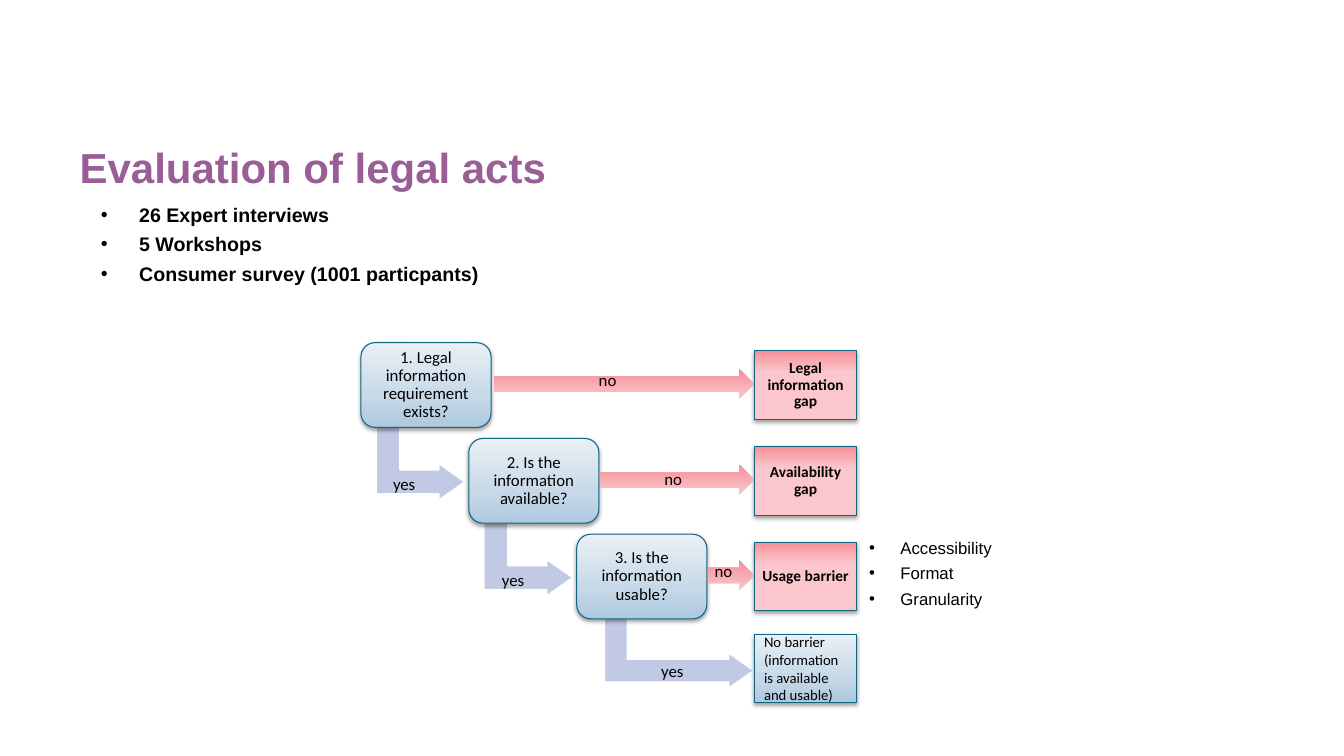
import lxml.etree
import pptx
import pptx.dml.color
import pptx.enum.shapes
import pptx.enum.text
import pptx.oxml.ns
import pptx.util

EMU_PER_PX = 9144
COLORS = {"title": "9A5E97", "text": "000000", "outline": "116583", "elbow": "C1C9E4", "white": "FFFFFF"}
GRADIENTS = {
    "blue": [(0, "ACC9DE"), (35, "C6D8E7"), (100, "E9F0F6")],
    "red": [(68, "FBC7CC"), (100, "F78F99")],
    "arrow": [(0, "FBC7CC"), (99, "F78F99")],
}
SHAPES = pptx.enum.shapes.MSO_SHAPE
ALIGN = pptx.enum.text.PP_ALIGN
ANCHOR = pptx.enum.text.MSO_ANCHOR


def px(length):
    return pptx.util.Emu(length * EMU_PER_PX)


def color(name):
    return pptx.dml.color.RGBColor.from_string(COLORS[name])


def child(parent, tag, **attributes):
    return lxml.etree.SubElement(parent, pptx.oxml.ns.qn(tag), attributes)


class FlowSlide:
    """Draws the elements of a decision flow on one slide in one style."""

    def __init__(self, slide):
        self.slide = slide

    def place(self, shape, box):
        shape.left, shape.top, shape.width, shape.height = map(px, box)

    def set_text(self, shape, lines, size, font="Calibri", bold=False, ink="text", align=ALIGN.LEFT,
                 anchor=ANCHOR.TOP, inset=0, spacing=1.0, before=0, bullet=None):
        frame = shape.text_frame
        frame.word_wrap = True
        frame.auto_size = pptx.enum.text.MSO_AUTO_SIZE.NONE
        frame.vertical_anchor = anchor
        if inset is not None:
            frame.margin_left = frame.margin_right = px(inset)
            frame.margin_top = frame.margin_bottom = px(inset)
        frame.text = "\n".join(lines)
        for index, paragraph in enumerate(frame.paragraphs):
            paragraph.alignment = align
            paragraph.line_spacing = spacing
            paragraph.space_before = pptx.util.Pt(before if index else 0)
            if bullet:
                self.add_bullet(paragraph, *bullet)
            paragraph.font.name = font
            paragraph.font.size = pptx.util.Pt(size)
            paragraph.font.bold = bold
            paragraph.font.color.rgb = color(ink)

    def add_bullet(self, paragraph, margin, hanging):
        properties = paragraph._p.get_or_add_pPr()
        properties.set("marL", str(px(margin)))
        properties.set("indent", str(-px(hanging)))
        child(child(properties, "a:buClr"), "a:srgbClr", val=COLORS["text"])
        child(properties, "a:buFont", typeface="Arial")
        child(properties, "a:buChar", char="•")

    def title(self, text, box):
        shape = self.slide.shapes.title
        self.place(shape, box)
        self.set_text(shape, [text], 30, "Arial", True, "title", anchor=ANCHOR.BOTTOM, spacing=1.25)

    def bullets(self, index, lines, box, size, **style):
        shape = self.slide.placeholders[index]
        self.place(shape, box)
        self.set_text(shape, lines, size, "Arial", **style)

    def shape(self, kind, box):
        shape = self.slide.shapes.add_shape(kind, *map(px, box))
        shape.shadow.inherit = False
        return shape

    def paint(self, shape, gradient):
        shape.fill.gradient()
        shape.fill.gradient_angle = 90
        stops = shape._element.spPr.find(".//" + pptx.oxml.ns.qn("a:gsLst"))
        for stop in list(stops):
            stops.remove(stop)
        for position, value in GRADIENTS[gradient]:
            child(child(stops, "a:gs", pos=str(position * 1000)), "a:srgbClr", val=value)

    def node(self, kind, text, box, gradient, size, **style):
        shape = self.shape(kind, box)
        self.paint(shape, gradient)
        shape.line.color.rgb = color("outline")
        shape.line.width = pptx.util.Pt(0.75)
        effects = shape._element.spPr.find(pptx.oxml.ns.qn("a:effectLst"))
        shadow = child(effects, "a:outerShdw", blurRad=str(pptx.util.Pt(3.1)),
                       dist=str(pptx.util.Pt(1.6)), dir="5400000", rotWithShape="0")
        child(child(shadow, "a:srgbClr", val="000000"), "a:alpha", val="38000")
        self.set_text(shape, [text], size, anchor=ANCHOR.MIDDLE, **style)

    def elbow(self, box):
        shape = self.shape(SHAPES.BENT_UP_ARROW, box)
        shape.rotation = 90
        for index, value in enumerate((0.328, 0.25, 0.358)):
            shape.adjustments[index] = value
        shape.fill.solid()
        shape.fill.fore_color.rgb = color("elbow")
        shape.line.color.rgb = color("white")
        shape.line.width = pptx.util.Pt(1)

    def arrow(self, box):
        shape = self.shape(SHAPES.RIGHT_ARROW, box)
        self.paint(shape, "arrow")
        shape.line.fill.background()

    def label(self, text, left, top):
        shape = self.slide.shapes.add_textbox(px(left), px(top), px(54), px(30))
        self.set_text(shape, [text], 12, inset=None)


def main():
    presentation = pptx.Presentation()
    presentation.slide_width, presentation.slide_height = px(1333), px(750)
    flow = FlowSlide(presentation.slides.add_slide(presentation.slide_layouts[3]))
    flow.title("Evaluation of legal acts", (79, 148, 1175, 42))
    flow.bullets(1, ["26 Expert interviews", "5 Workshops", "Consumer survey (1001 particpants)"],
                 (76, 195, 569, 113), 14, bold=True, spacing=1.26, bullet=(62, 38))
    flow.bullets(2, ["Accessibility", "Format", "Granularity"],
                 (812, 533, 257, 129), 12, before=4, bullet=(81, 31))

    step_x, step_y = 107, 95
    gap_left, gap_width, gap_height = 748, 102, 68
    for box in ((381, 416, 72, 88), (381 + step_x, 416 + step_y, 72, 88), (639, 574, 69, 148)):
        flow.elbow(box)

    steps = [
        ("1. Legal information requirement exists?", "Legal information gap", 490, (584, 362)),
        ("2. Is the information available?", "Availability gap", 595, (649, 460)),
        ("3. Is the information usable?", "Usage barrier", 702, (699, 551)),
    ]
    for index, (question, gap, arrow_left, no_position) in enumerate(steps):
        down = index * step_y
        flow.node(SHAPES.ROUNDED_RECTANGLE, question, (358 + index * step_x, 340 + down, 129, 84),
                  "blue", 12, align=ALIGN.CENTER, inset=10, spacing=0.9)
        flow.node(SHAPES.RECTANGLE, gap, (gap_left, 348 + down, gap_width, gap_height),
                  "red", 11, bold=True, align=ALIGN.CENTER, inset=4, spacing=0.9)
        flow.arrow((arrow_left, 366 + down, gap_left - arrow_left, 30))
        flow.label("no", *no_position)
    flow.node(SHAPES.RECTANGLE, "No barrier (information is available and usable)",
              (gap_left, 629, gap_width, gap_height), "blue", 10.5, inset=10)
    for yes_position in ((380, 465), (488, 560), (646, 651)):
        flow.label("yes", *yes_position)
    presentation.save("out.pptx")


if __name__ == "__main__":
    main()
